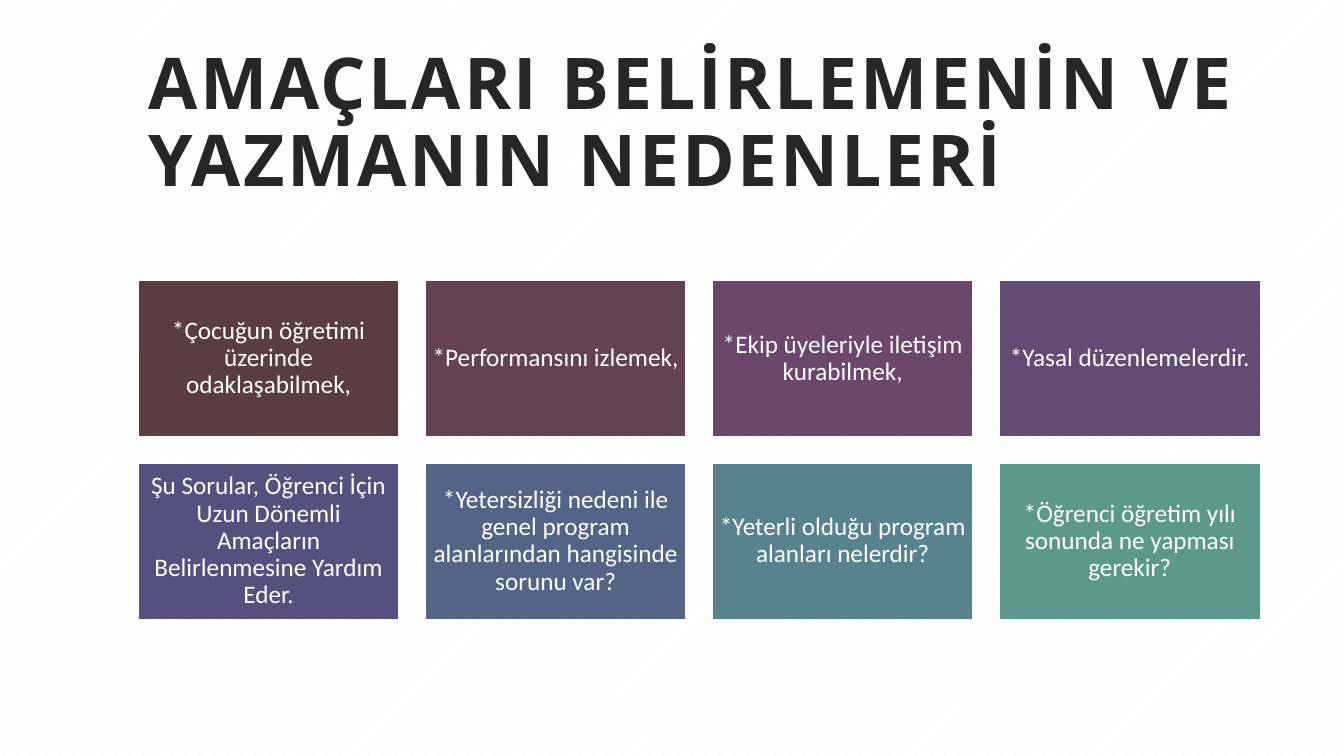
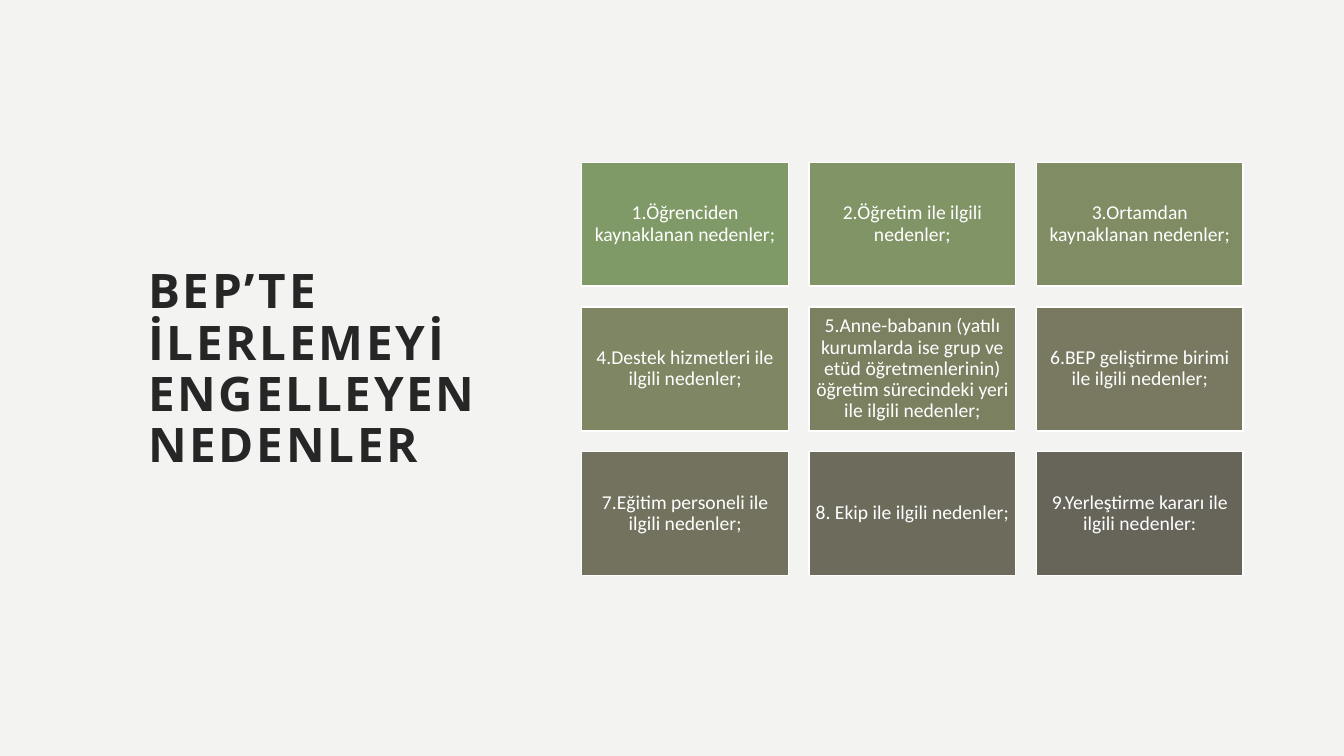
from pptx import Presentation
from pptx import util as u
from pptx.dml.color import RGBColor
from pptx.enum import dml, shapes, text

COLOURS = {"paper": "F3F3F2", "white": "FFFFFF", "title": "262626"}
TITLE_FONT, CARD_FONT = "Open Sans", "Calibri"
LINE_SPACING = 0.9
CARD_GAP, CARD_HEIGHT = 0.1, 0.6

SLIDES = [
    {
        "patterned": True,
        "title": "AMAÇLARI BELİRLEMENİN VE YAZMANIN NEDENLERİ",
        "title_box": (1.37, 0.42, 11.13, 1.63),
        "title_size": 51,
        "grid": {"left": 1.37, "top": 2.78, "width": 11.13, "columns": 4},
        "card_size": 18,
        "inset": 0.07,
        "cards": [
            ("*Çocuğun öğretimi üzerinde odaklaşabilmek,", "5A3D40"),
            ("*Performansını izlemek,", "634254"),
            ("*Ekip üyeleriyle iletişim kurabilmek,", "6B476B"),
            ("*Yasal düzenlemelerdir.", "624B74"),
            ("Şu Sorular, Öğrenci İçin Uzun Dönemli Amaçların Belirlenmesine Yardım Eder.", "55507D"),
            ("*Yetersizliği nedeni ile genel program alanlarından hangisinde sorunu var?", "546486"),
            ("*Yeterli olduğu program alanları nelerdir?", "59828F"),
            ("*Öğrenci öğretim yılı sonunda ne yapması gerekir?", "5D988C"),
        ],
    },
    {
        "patterned": False,
        "title": "BEP’TE İLERLEMEYİ ENGELLEYEN NEDENLER",
        "title_box": (1.37, 0.71, 3.7, 5.93),
        "title_size": 34,
        "grid": {"left": 5.77, "top": 1.61, "width": 6.56, "columns": 3},
        "card_size": 14,
        "inset": 0.06,
        "cards": [
            ("1.Öğrenciden kaynaklanan nedenler;", "809A67"),
            ("2.Öğretim ile ilgili nedenler;", "809465"),
            ("3.Ortamdan kaynaklanan nedenler;", "808D64"),
            ("4.Destek hizmetleri ile ilgili nedenler;", "7E8663"),
            ("5.Anne-babanın (yatılı kurumlarda ise grup ve etüd öğretmenlerinin) "
             "öğretim sürecindeki yeri ile ilgili nedenler;", "7B8061"),
            ("6.BEP geliştirme birimi ile ilgili nedenler;", "787960"),
            ("7.Eğitim personeli ile ilgili nedenler;", "73725E"),
            ("8. Ekip ile ilgili nedenler;", "6D6B5C"),
            ("9.Yerleştirme kararı ile ilgili nedenler:", "67645A"),
        ],
    },
]


def colour(name):
    return RGBColor.from_string(COLOURS.get(name, name))


def paint_background(slide, patterned):
    fill = slide.background.fill
    if patterned:
        fill.patterned()
        fill.pattern = dml.MSO_PATTERN.PERCENT_5
        fill.fore_color.rgb = colour("paper")
        fill.back_color.rgb = colour("white")
    else:
        fill.solid()
        fill.fore_color.rgb = colour("paper")


def write(shape, words, font, size, ink, align):
    frame = shape.text_frame
    frame.word_wrap = True
    frame.vertical_anchor = text.MSO_ANCHOR.MIDDLE
    paragraph = frame.paragraphs[0]
    paragraph.alignment = align
    paragraph.line_spacing = LINE_SPACING
    run = paragraph.add_run()
    run.text = words
    run.font.name = font
    run.font.size = u.Pt(size)
    run.font.color.rgb = colour(ink)
    return run


def add_title(slide, content):
    box = slide.shapes.add_textbox(*map(u.Inches, content["title_box"]))
    run = write(box, content["title"], TITLE_FONT, content["title_size"],
                "title", text.PP_ALIGN.LEFT)
    run.font.bold = True
    run.font._element.set("spc", "200")


def add_cards(slide, content):
    grid = content["grid"]
    columns = grid["columns"]
    width = grid["width"] / (columns + CARD_GAP * (columns - 1))
    height, gap = width * CARD_HEIGHT, width * CARD_GAP
    for index, (words, fill) in enumerate(content["cards"]):
        row, column = divmod(index, columns)
        left = grid["left"] + column * (width + gap)
        top = grid["top"] + row * (height + gap)
        card = slide.shapes.add_shape(shapes.MSO_SHAPE.RECTANGLE,
                                      *map(u.Inches, (left, top, width, height)))
        card.shadow.inherit = False
        card.fill.solid()
        card.fill.fore_color.rgb = colour(fill)
        card.line.color.rgb = colour("white")
        card.line.width = u.Pt(1)
        frame = card.text_frame
        frame.margin_left = frame.margin_right = u.Inches(content["inset"])
        frame.margin_top = frame.margin_bottom = u.Inches(content["inset"])
        write(card, words, CARD_FONT, content["card_size"], "white", text.PP_ALIGN.CENTER)


def main():
    presentation = Presentation()
    presentation.slide_width = u.Inches(13.33)
    presentation.slide_height = u.Inches(7.5)
    for content in SLIDES:
        slide = presentation.slides.add_slide(presentation.slide_layouts[6])
        paint_background(slide, content["patterned"])
        add_title(slide, content)
        add_cards(slide, content)
    presentation.save("out.pptx")


if __name__ == "__main__":
    main()
